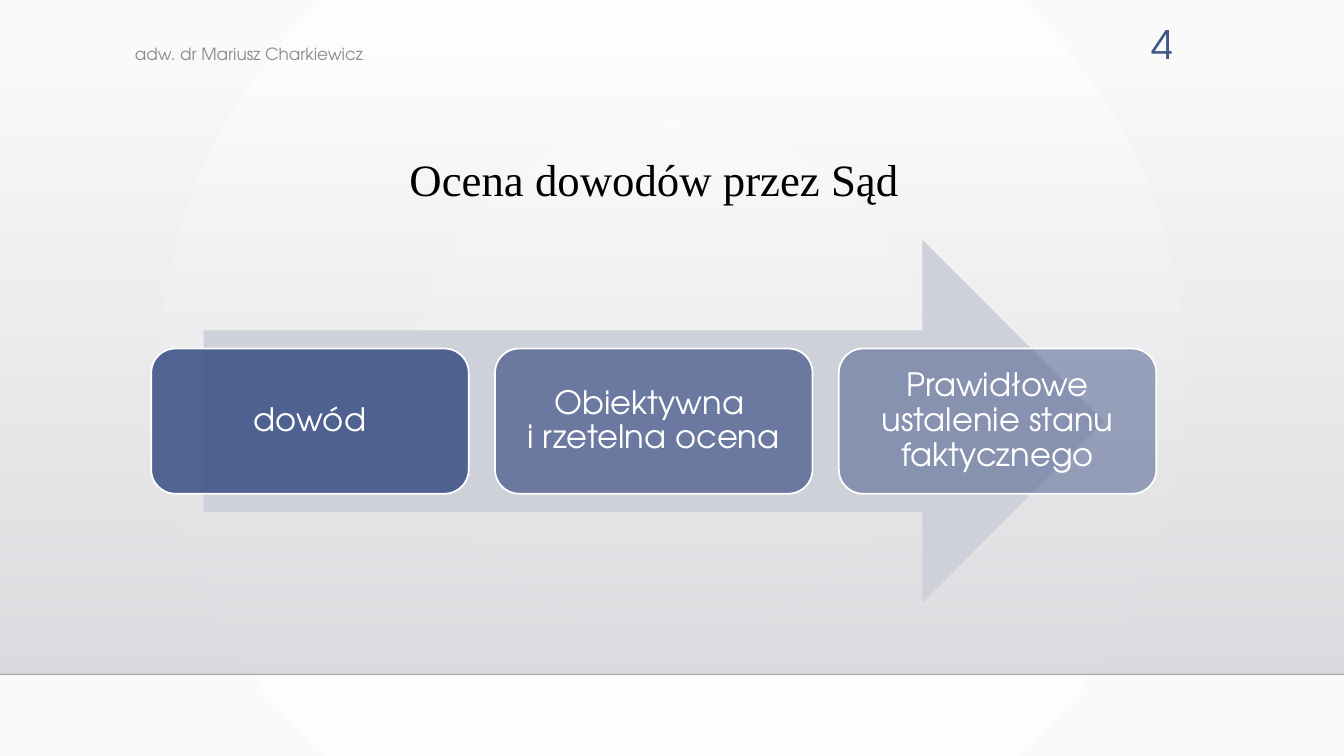
from dataclasses import dataclass

from lxml.etree import SubElement
from pptx import Presentation
from pptx.dml.color import RGBColor as RGB
from pptx.enum.shapes import MSO_CONNECTOR as Connector, MSO_SHAPE as Shape
from pptx.enum.text import MSO_ANCHOR as Anchor, MSO_AUTO_SIZE as AutoSize, PP_ALIGN as Align
from pptx.oxml.ns import qn
from pptx.util import Pt


@dataclass(frozen=True)
class Theme:
    navy: str = "415588"
    white: str = "FFFFFF"
    black: str = "000000"
    grey: str = "8C8C8C"
    arrow: str = "CFD1DA"
    rule: str = "000001"
    backdrop: tuple = ("FFFFFF", "FAFAFA")
    band: tuple = ("DCDCE0", "DEDEE2")
    serif: str = "Times New Roman"
    sans: str = "TeX Gyre Adventor"
    title_size: float = 32
    step_size: float = 23
    number_size: float = 28
    author_size: float = 12


class SlideBuilder:
    def __init__(self, slide, theme):
        self.slide, self.shapes, self.theme = slide, slide.shapes, theme

    @staticmethod
    def apply(target, values):
        for key, value in values.items():
            setattr(target, key, value)

    @staticmethod
    def set_alpha(fill_parent, percent):
        color = next(fill_parent.iter(qn("a:srgbClr")))
        SubElement(color, qn("a:alpha"), val=str(percent * 1000))

    @staticmethod
    def gradient(fill, colors):
        fill.gradient()
        for stop, color in zip(fill.gradient_stops, colors):
            stop.color.rgb = RGB.from_string(color)

    def set_text(self, shape, text, size, color, font=None, align=Align.LEFT,
                 anchor=Anchor.TOP, spacing=None, **margins):
        frame = shape.text_frame
        frame.text = text
        self.apply(frame, {"word_wrap": True, "auto_size": AutoSize.NONE,
                           "vertical_anchor": anchor, **margins})
        paragraph = frame.paragraphs[0]
        self.apply(paragraph, {"alignment": align, "line_spacing": spacing})
        for run in paragraph.runs:
            self.apply(run.font, {"name": font or self.theme.sans, "size": Pt(size)})
            run.font.color.rgb = RGB.from_string(color)

    def backdrop(self):
        self.gradient(self.slide.background.fill, self.theme.backdrop)
        grad = next(self.slide.element.iter(qn("a:gradFill")))
        grad.remove(grad.find(qn("a:lin")))
        circle = SubElement(grad, qn("a:path"), {"path": "circle"})
        SubElement(circle, qn("a:fillToRect"),
                   {side: "50000" for side in "ltrb"})

    def shape(self, kind, box, color=None, alpha=None, outline=None):
        shape = self.shapes.add_shape(kind, *map(Pt, box))
        shape.shadow.inherit = False
        if color:
            shape.fill.solid()
            shape.fill.fore_color.rgb = RGB.from_string(color)
        if alpha is not None:
            self.set_alpha(shape.element.spPr, alpha)
        if outline:
            shape.line.color.rgb = RGB.from_string(outline)
            shape.line.width = Pt(1.25)
        else:
            shape.line.fill.background()
        return shape

    def band(self, box):
        band = self.shape(Shape.RECTANGLE, box)
        self.gradient(band.fill, self.theme.band)
        band.fill.gradient_angle = 270
        self.set_alpha(band.element.spPr, 0)

    def rule(self, y, width, alpha):
        rule = self.shapes.add_connector(Connector.STRAIGHT, 0, Pt(y), Pt(width), Pt(y))
        rule.line.color.rgb = RGB.from_string(self.theme.rule)
        rule.line.width = Pt(1)
        self.set_alpha(rule.element.spPr, alpha)
        SubElement(rule.element.spPr, qn("a:effectLst"))

    def title(self, text, box):
        title = self.shapes.title
        self.apply(title, dict(zip(("left", "top", "width", "height"), map(Pt, box))))
        self.set_text(title, text, self.theme.title_size, self.theme.black,
                      self.theme.serif, Align.CENTER, spacing=0.9)
        # Bring the title in front of the band
        title.element.getparent().append(title.element)

    def label(self, text, box, size, color, **style):
        self.set_text(self.shapes.add_textbox(*map(Pt, box)), text, size, color, **style)

    def step(self, text, box, alpha):
        card = self.shape(Shape.ROUNDED_RECTANGLE, box, self.theme.navy, alpha, self.theme.white)
        margins = {f"margin_{side}": Pt(7) for side in ("left", "top", "right", "bottom")}
        self.set_text(card, text, self.theme.step_size, self.theme.white, align=Align.CENTER,
                      anchor=Anchor.MIDDLE, spacing=0.9, **margins)


WIDTH, HEIGHT = 960, 540
STEPS = ["dowód", "Obiektywna \vi rzetelna ocena", "Prawidłowe ustalenie stanu faktycznego"]


def main():
    deck = Presentation()
    deck.slide_width, deck.slide_height = Pt(WIDTH), Pt(HEIGHT)
    theme = Theme()
    page = SlideBuilder(deck.slides.add_slide(deck.slide_layouts[5]), theme)

    # Background
    page.backdrop()
    page.band((0, 36.7, WIDTH, 445))
    page.rule(481.7, WIDTH, alpha=20)

    # Title
    page.title("Ocena dowodów przez Sąd", (89.3, 109.4, 756, 82.8))

    # Process: arrow with three fading steps
    page.shape(Shape.RIGHT_ARROW, (145.5, 171.3, 643, 259.2), theme.arrow)
    for index, text in enumerate(STEPS):
        page.step(text, (108 + 245.6 * index, 249, 226.8, 103.7), alpha=90 - 20 * index)

    # Author and slide number
    page.label("adw. dr Mariusz Charkiewicz", (89.3, 26, 467.3, 24.5),
               theme.author_size, theme.grey, anchor=Anchor.MIDDLE)
    page.label("4", (781.2, 10.8, 64, 39.6), theme.number_size, theme.navy, align=Align.RIGHT)

    deck.save("out.pptx")


if __name__ == "__main__":
    main()
